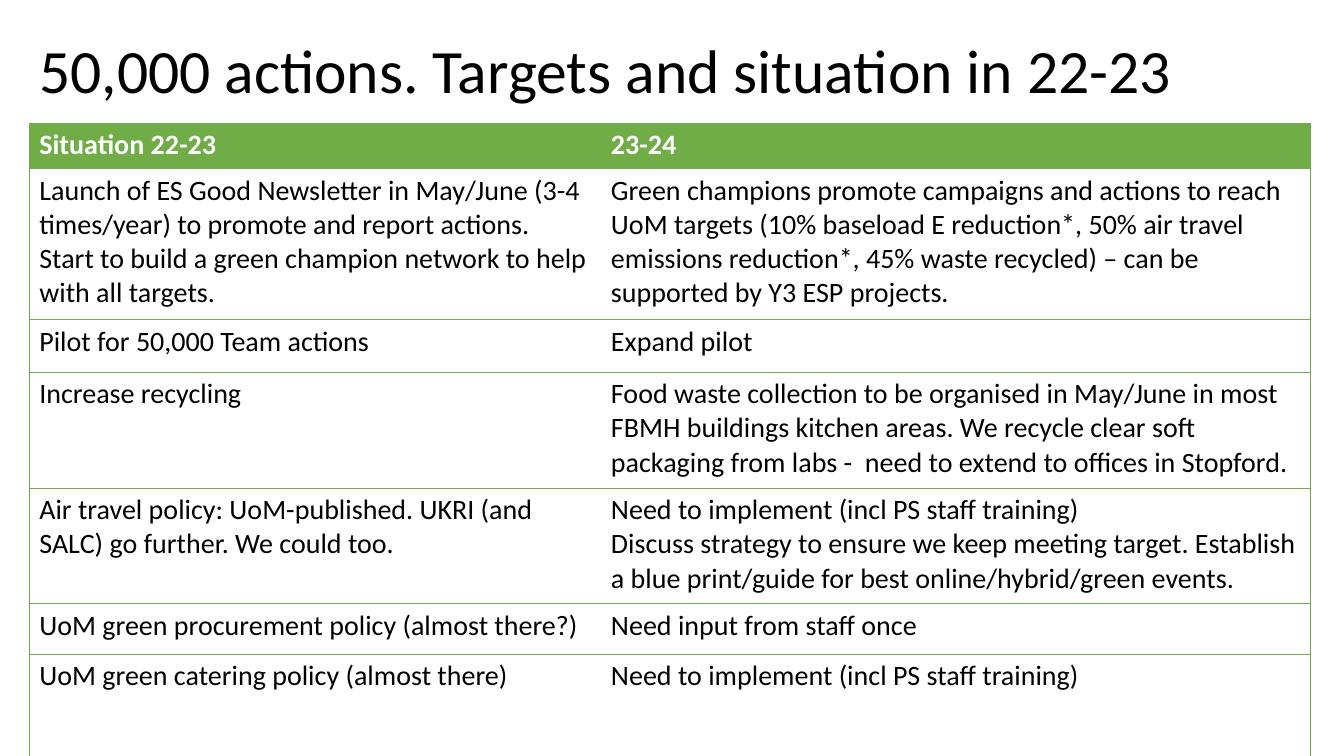
from dataclasses import dataclass

from lxml import etree
from pptx import Presentation
from pptx import util as u
from pptx.dml.color import RGBColor
from pptx.enum import text
from pptx.oxml import ns


@dataclass(frozen=True)
class Theme:
    font: str = "Calibri"
    title_size: int = 44
    cell_size: int = 20
    line_width: float = 0.5
    green: str = "70AD47"
    ink: str = "000000"
    paper: str = "FFFFFF"


THEME = Theme()
COLUMN_WIDTHS = [5.67, 7.04]
ROW_HEIGHTS = [0.45, 1.5, 0.52, 1.15, 1.15, 0.5, 1.01]
ROWS = [
    ("Situation 22-23", "23-24"),
    ("Launch of ES Good Newsletter in May/June (3-4 times/year) to promote and report actions.\n"
     "Start to build a green champion network to help with all targets.",
     "Green champions promote campaigns and actions to reach UoM targets (10% baseload E "
     "reduction*, 50% air travel emissions reduction*, 45% waste recycled) – can be supported "
     "by Y3 ESP projects."),
    ("Pilot for 50,000 Team actions", "Expand pilot"),
    ("Increase recycling",
     "Food waste collection to be organised in May/June in most FBMH buildings kitchen areas. "
     "We recycle clear soft packaging from labs -  need to extend to offices in Stopford."),
    ("Air travel policy: UoM-published. UKRI (and SALC) go further. We could too.",
     "Need to implement (incl PS staff training)\n"
     "Discuss strategy to ensure we keep meeting target. Establish a blue print/guide for best "
     "online/hybrid/green events."),
    ("UoM green procurement policy (almost there?)", "Need input from staff once"),
    ("UoM green catering policy (almost there)", "Need to implement (incl PS staff training)"),
]


def style_text(frame, size, color, bold=False):
    for para in frame.paragraphs:
        para.alignment = text.PP_ALIGN.LEFT
        for span in para.runs:
            span.font.name = THEME.font
            span.font.size = u.Pt(size)
            span.font.bold = bold
            span.font.color.rgb = RGBColor.from_string(color)


def set_borders(cell, visible_sides):
    """Draw the named sides in green and hide the others."""
    properties = cell._tc.get_or_add_tcPr()
    for position, side in enumerate("LRTB"):
        line = etree.Element(ns.qn(f"a:ln{side}"), w=str(u.Pt(THEME.line_width)))
        if side in visible_sides:
            fill = etree.SubElement(line, ns.qn("a:solidFill"))
            etree.SubElement(fill, ns.qn("a:srgbClr"), val=THEME.green)
        else:
            etree.SubElement(line, ns.qn("a:noFill"))
        properties.insert(position, line)


def add_title(slide, wording):
    title = slide.shapes.title
    title.left, title.top = u.Inches(0.29), u.Inches(0)
    title.width, title.height = u.Inches(12.75), u.Inches(1.45)
    frame = title.text_frame
    frame.text = wording
    frame.word_wrap = True
    frame.auto_size = text.MSO_AUTO_SIZE.NONE
    frame.vertical_anchor = text.MSO_ANCHOR.MIDDLE
    frame.paragraphs[0].line_spacing = 0.9
    style_text(frame, THEME.title_size, THEME.ink)


def add_actions_table(slide):
    table = slide.shapes.add_table(
        len(ROWS), len(COLUMN_WIDTHS), u.Inches(0.29), u.Inches(1.22),
        u.Inches(sum(COLUMN_WIDTHS)), u.Inches(sum(ROW_HEIGHTS))).table
    table.horz_banding = False
    for column, width in zip(table.columns, COLUMN_WIDTHS):
        column.width = u.Inches(width)
    for row, height in zip(table.rows, ROW_HEIGHTS):
        row.height = u.Inches(height)

    for row_index, wordings in enumerate(ROWS):
        header = row_index == 0
        for column_index, wording in enumerate(wordings):
            cell = table.cell(row_index, column_index)
            cell.text_frame.text = wording
            style_text(cell.text_frame, THEME.cell_size,
                       THEME.paper if header else THEME.ink, bold=header)
            if header:
                cell.fill.solid()
                cell.fill.fore_color.rgb = RGBColor.from_string(THEME.green)
            else:
                cell.fill.background()
            # Horizontal rules everywhere, vertical ones on the outside only
            set_borders(cell, "TB" + "LR"[column_index])


def main():
    deck = Presentation()
    deck.slide_width, deck.slide_height = u.Inches(13.33), u.Inches(7.5)
    slide = deck.slides.add_slide(deck.slide_layouts[5])
    add_title(slide, "50,000 actions. Targets and situation in 22-23")
    add_actions_table(slide)
    deck.save("out.pptx")


if __name__ == "__main__":
    main()
